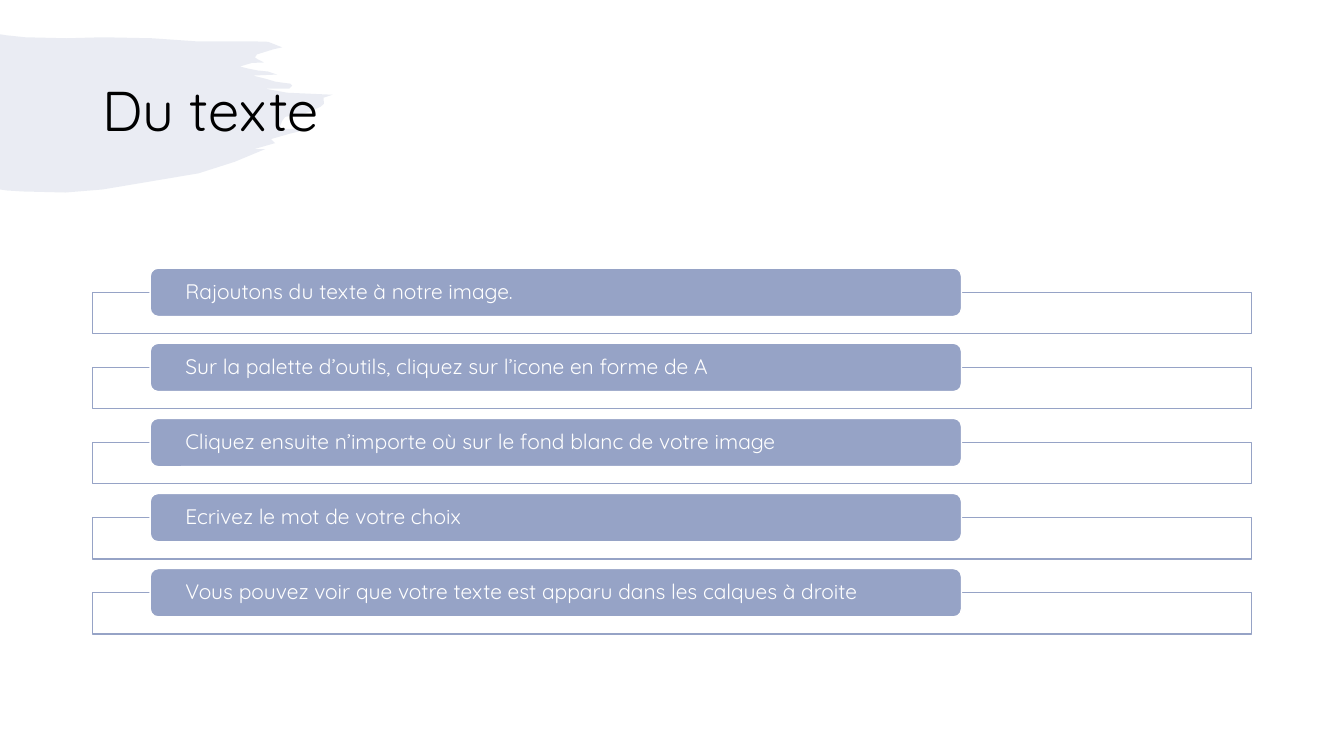
from dataclasses import dataclass

from pptx import Presentation, util as u
from pptx.dml.color import RGBColor
from pptx.enum import shapes, text
from pptx.oxml.ns import qn
from lxml import etree

PX = 4572  # 200 px to the inch


@dataclass(frozen=True)
class Theme:
    blue: str = "96A3C6"
    white: str = "FFFFFF"
    black: str = "000000"
    font: str = "Quicksand"
    head: int = 40
    body: int = 15


LOOK = Theme()

STEPS = [
    "Rajoutons du texte à notre image.",
    "Sur la palette d’outils, cliquez sur l’icone en forme de A",
    "Cliquez ensuite n’importe où sur le fond blanc de votre image",
    "Ecrivez le mot de votre choix",
    "Vous pouvez voir que votre texte est apparu dans les calques à droite",
]
TOP, PITCH = 532, 149

# Outline of the brush stroke, clockwise from the top left
BRUSH = [
    (0, 68), (12, 70), (50, 74), (132, 76), (204, 74), (302, 76), (388, 82),
    (496, 82), (532, 83), (560, 94), (542, 98), (510, 108), (506, 114),
    (512, 118), (524, 124), (500, 125), (476, 132), (492, 136), (512, 140),
    (532, 142), (550, 148), (526, 149), (502, 150), (526, 156), (546, 162),
    (560, 164), (576, 166), (580, 170), (574, 176), (568, 176), (526, 176),
    (570, 184), (660, 188), (642, 194), (643, 206), (636, 212), (614, 222),
    (600, 226), (566, 232), (560, 240), (556, 250), (548, 256), (616, 256),
    (576, 265), (538, 276), (546, 284), (504, 296), (526, 296), (466, 321),
    (394, 344), (204, 376), (130, 382), (46, 380), (14, 378), (0, 376),
]


def tint(shape, color, alpha=100):
    """Fill solidly, with opacity in percent."""
    shape.shadow.inherit = False
    shape.fill.solid()
    shape.fill.fore_color.rgb = RGBColor.from_string(color)
    if alpha < 100:
        node = shape._element.spPr.find(".//" + qn("a:srgbClr"))
        etree.SubElement(node, qn("a:alpha")).set("val", str(alpha * 1000))


def write(shape, words, size, color, inset):
    frame = shape.text_frame
    frame.word_wrap = True
    frame.vertical_anchor = text.MSO_ANCHOR.MIDDLE
    frame.margin_left = frame.margin_right = inset * PX
    frame.margin_top = frame.margin_bottom = 0
    para = frame.paragraphs[0]
    para.alignment = text.PP_ALIGN.LEFT
    para.line_spacing = 0.9
    run = para.add_run()
    run.text = words
    run.font.name = LOOK.font
    run.font.size = u.Pt(size)
    run.font.color.rgb = RGBColor.from_string(color)


def box(slide, kind, place, fill, line, alpha=100):
    shape = slide.shapes.add_shape(kind, *(n * PX for n in place))
    tint(shape, fill, alpha)
    shape.line.color.rgb = RGBColor.from_string(line)
    shape.line.width = u.Pt(1)
    return shape


def brush(slide):
    pen = slide.shapes.build_freeform(*BRUSH[0], scale=PX)
    pen.add_line_segments(BRUSH[1:], close=True)
    stroke = pen.convert_to_shape()
    tint(stroke, LOOK.blue, 20)
    stroke.line.fill.background()


def title(slide, words):
    area = slide.shapes.add_textbox(*(n * PX for n in (184, 80, 2300, 290)))
    write(area, words, LOOK.head, LOOK.black, 20)


def step(slide, top, words):
    """A rounded bar of text over a wide outlined frame."""
    kind = shapes.MSO_SHAPE
    box(slide, kind.RECTANGLE, (184, top + 48, 2300, 82),
        LOOK.white, LOOK.blue, 90)
    bar = box(slide, kind.ROUNDED_RECTANGLE, (298, top, 1610, 96),
              LOOK.blue, LOOK.white)
    write(bar, words, LOOK.body, LOOK.white, 65)


def main():
    deck = Presentation()
    deck.slide_width, deck.slide_height = 2667 * PX, 1500 * PX
    slide = deck.slides.add_slide(deck.slide_layouts[6])
    brush(slide)
    title(slide, "Du texte")
    for row, words in enumerate(STEPS):
        step(slide, TOP + row * PITCH, words)
    deck.save("out.pptx")


if __name__ == "__main__":
    main()
